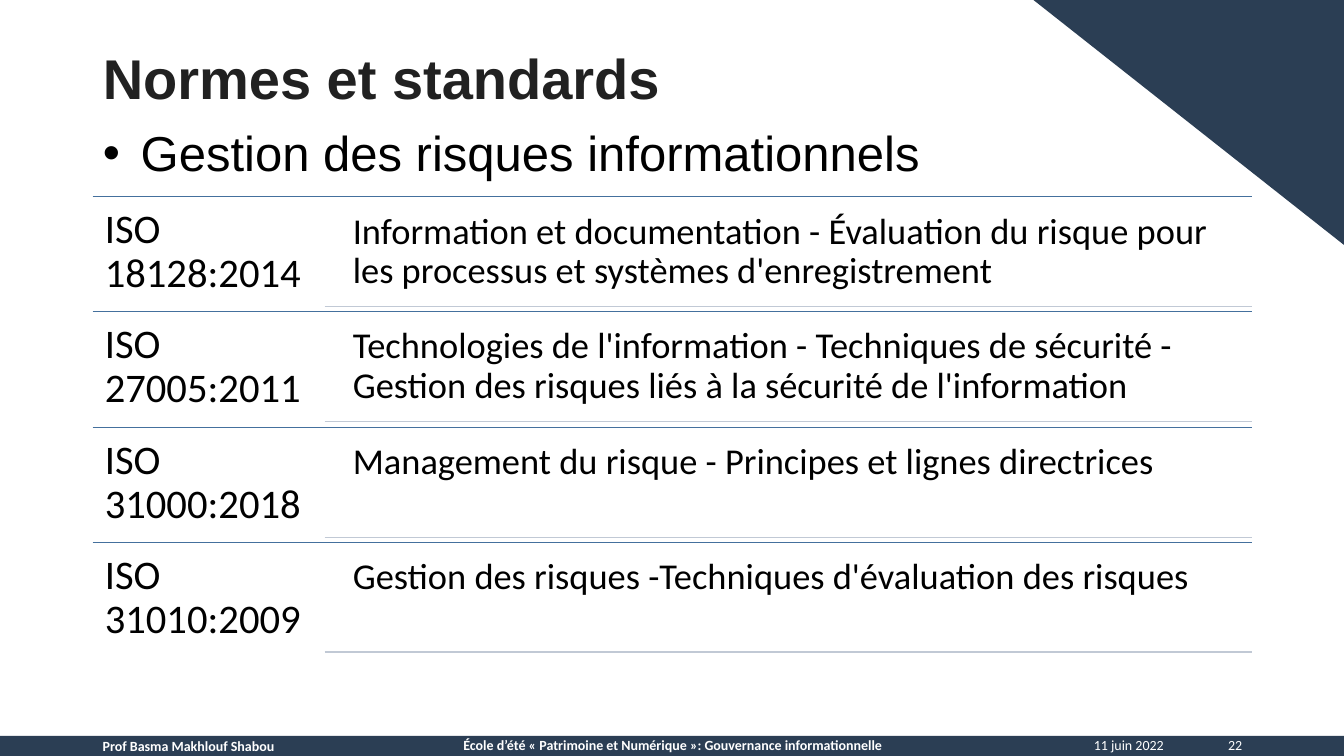
from dataclasses import dataclass

import lxml.etree
import pptx
import pptx.dml.color
import pptx.enum.shapes
import pptx.enum.text
import pptx.oxml.ns
import pptx.util

RGBColor = pptx.dml.color.RGBColor
Align = pptx.enum.text.PP_ALIGN
Shape = pptx.enum.shapes.MSO_SHAPE

NAVY = RGBColor(0x2B, 0x3E, 0x54)
BLUE = RGBColor(0x44, 0x70, 0x9D)
PALE = RGBColor(0xC1, 0xC9, 0xD5)
CHARCOAL = RGBColor(0x21, 0x21, 0x21)
BLACK = RGBColor(0, 0, 0)
WHITE = RGBColor(255, 255, 255)

EMU_PER_PX = 9144
LEFT = 92
RIGHT = 1242
FIRST_ROW_TOP = 195
ROW_STEP = 114.4


def px(length: int) -> int:
    return length * EMU_PER_PX


@dataclass(frozen=True)
class Frame:
    left: int
    top: int
    width: int
    height: int

    def emu(self) -> tuple[int, int, int, int]:
        return px(self.left), px(self.top), px(self.width), px(self.height)


@dataclass(frozen=True)
class Style:
    size: int
    color: RGBColor
    font: str = "Calibri"
    bold: bool = False
    align: Align = Align.LEFT
    spacing: float = 0.9


@dataclass(frozen=True)
class FooterItem:
    text: str
    frame: Frame
    align: Align
    bold: bool = False
    spacing: float = 0.9


@dataclass(frozen=True)
class Standard:
    code: str
    subject: str


FOOTER = [
    FooterItem("11 juin 2022", Frame(1065, 728, 99, 22), Align.RIGHT),
    FooterItem("Prof Basma Makhlouf Shabou", Frame(LEFT, 729, 305, 22), Align.JUSTIFY, True),
    FooterItem("22", Frame(1188, 726, 54, 27), Align.RIGHT, spacing=1.0),
    FooterItem(
        "École d’été « Patrimoine et Numérique »: Gouvernance informationnelle",
        Frame(447, 728, 440, 29), Align.CENTER, True,
    ),
]

STANDARDS = [
    Standard(
        "ISO 18128:2014",
        "Information et documentation - Évaluation du risque pour "
        "les processus et systèmes d'enregistrement",
    ),
    Standard(
        "ISO 27005:2011",
        "Technologies de l'information - Techniques de sécurité - "
        "Gestion des risques liés à la sécurité de l'information",
    ),
    Standard("ISO 31000:2018", "Management du risque - Principes et lignes directrices"),
    Standard("ISO 31010:2009", "Gestion des risques -Techniques d'évaluation des risques"),
]

CODE_STYLE = Style(29, BLACK)
SUBJECT_STYLE = Style(26, BLACK)
TITLE_STYLE = Style(40, CHARCOAL, "Arial", bold=True)
SUBTITLE_STYLE = Style(35, BLACK, "Arial")


def write_text(shape, text: str, style: Style) -> None:
    frame = shape.text_frame
    frame.text = text
    frame.word_wrap = True
    frame.auto_size = pptx.enum.text.MSO_AUTO_SIZE.NONE
    frame.vertical_anchor = pptx.enum.text.MSO_ANCHOR.TOP
    para = frame.paragraphs[0]
    para.alignment = style.align
    para.line_spacing = style.spacing
    para.space_before = pptx.util.Pt(0)
    para.font.name = style.font
    para.font.size = pptx.util.Pt(style.size)
    para.font.bold = style.bold
    para.font.color.rgb = style.color


def fill_placeholder(shape, frame: Frame, text: str, style: Style) -> None:
    shape.left, shape.top, shape.width, shape.height = frame.emu()
    properties = shape.text_frame.paragraphs[0]._p.get_or_add_pPr()
    properties.set("marL", "0")
    properties.set("indent", "0")
    lxml.etree.SubElement(properties, pptx.oxml.ns.qn("a:buNone"))
    write_text(shape, text, style)


def add_text(slide, frame: Frame, text: str, style: Style, inset: int | None = None) -> None:
    box = slide.shapes.add_textbox(*frame.emu())
    write_text(box, text, style)
    if inset is not None:
        area = box.text_frame
        area.margin_left = area.margin_right = px(inset)
        area.margin_top = area.margin_bottom = px(inset)


def add_block(slide, kind: Shape, frame: Frame, rotation: int = 0) -> None:
    block = slide.shapes.add_shape(kind, *frame.emu())
    block.rotation = rotation
    block.shadow.inherit = False
    block.fill.solid()
    block.fill.fore_color.rgb = NAVY
    block.line.fill.background()


def add_rule(slide, left: int, top: int, color: RGBColor) -> None:
    rule = slide.shapes.add_connector(
        pptx.enum.shapes.MSO_CONNECTOR.STRAIGHT, px(left), px(top), px(RIGHT), px(top)
    )
    rule.line.color.rgb = color
    rule.line.width = pptx.util.Pt(1)
    lxml.etree.SubElement(rule._element.spPr, pptx.oxml.ns.qn("a:effectLst"))


def add_standard(slide, top: int, standard: Standard) -> None:
    add_rule(slide, LEFT, top, BLUE)
    add_text(slide, Frame(LEFT, top, 230, 114), standard.code, CODE_STYLE, 12)
    add_text(slide, Frame(339, top + 5, 903, 104), standard.subject, SUBJECT_STYLE, 11)
    add_rule(slide, 322, top + 109, PALE)


def main() -> None:
    deck = pptx.Presentation()
    deck.slide_width = px(1333)
    deck.slide_height = px(750)
    slide = deck.slides.add_slide(deck.slide_layouts[1])

    add_block(slide, Shape.RIGHT_TRIANGLE, Frame(1025, 0, 308, 243), 180)
    add_block(slide, Shape.RECTANGLE, Frame(0, 730, 1333, 20))
    for item in FOOTER:
        style = Style(10, WHITE, bold=item.bold, align=item.align, spacing=item.spacing)
        add_text(slide, item.frame, item.text, style)

    for row, standard in enumerate(STANDARDS):
        add_standard(slide, FIRST_ROW_TOP + round(row * ROW_STEP), standard)

    fill_placeholder(
        slide.shapes.title, Frame(LEFT, 46, 1150, 71), "Normes et standards", TITLE_STYLE
    )
    fill_placeholder(
        slide.placeholders[1], Frame(LEFT, 123, 1150, 66),
        "Gestion des risques informationnels", SUBTITLE_STYLE,
    )
    deck.save("out.pptx")


if __name__ == "__main__":
    main()
